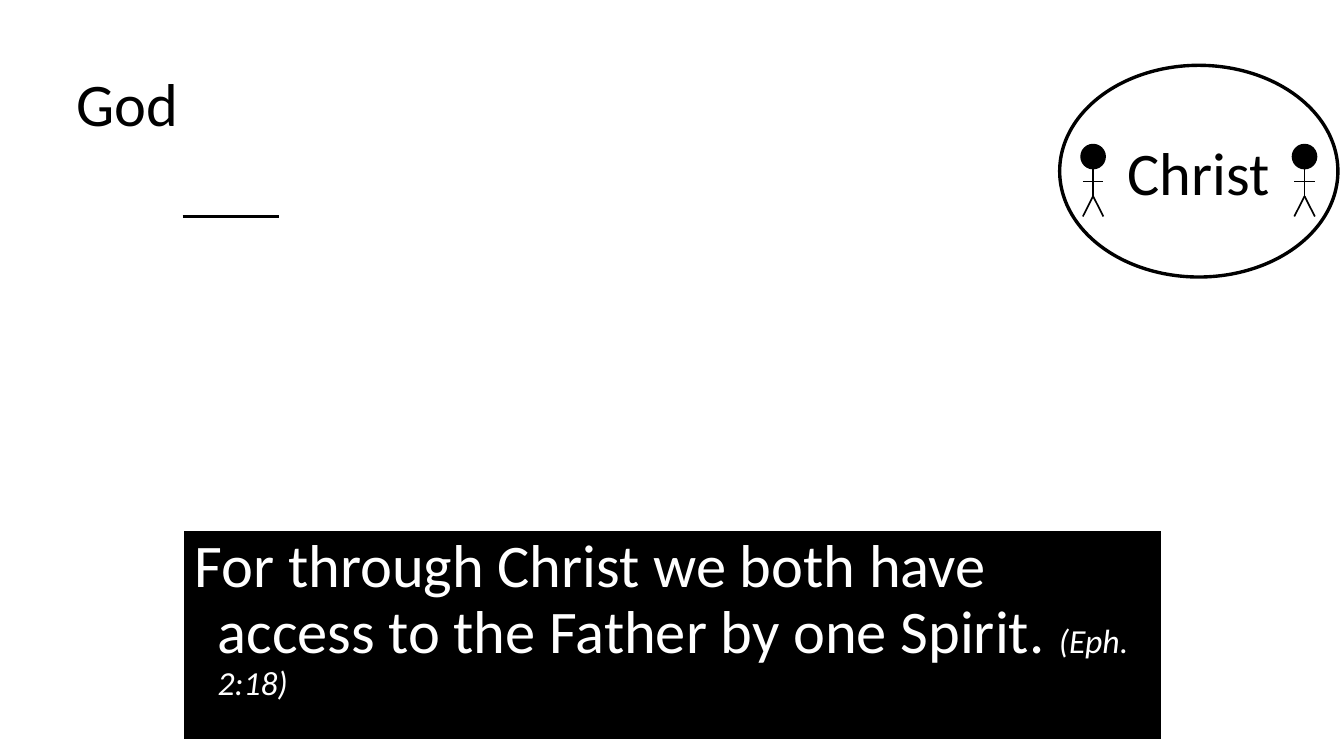
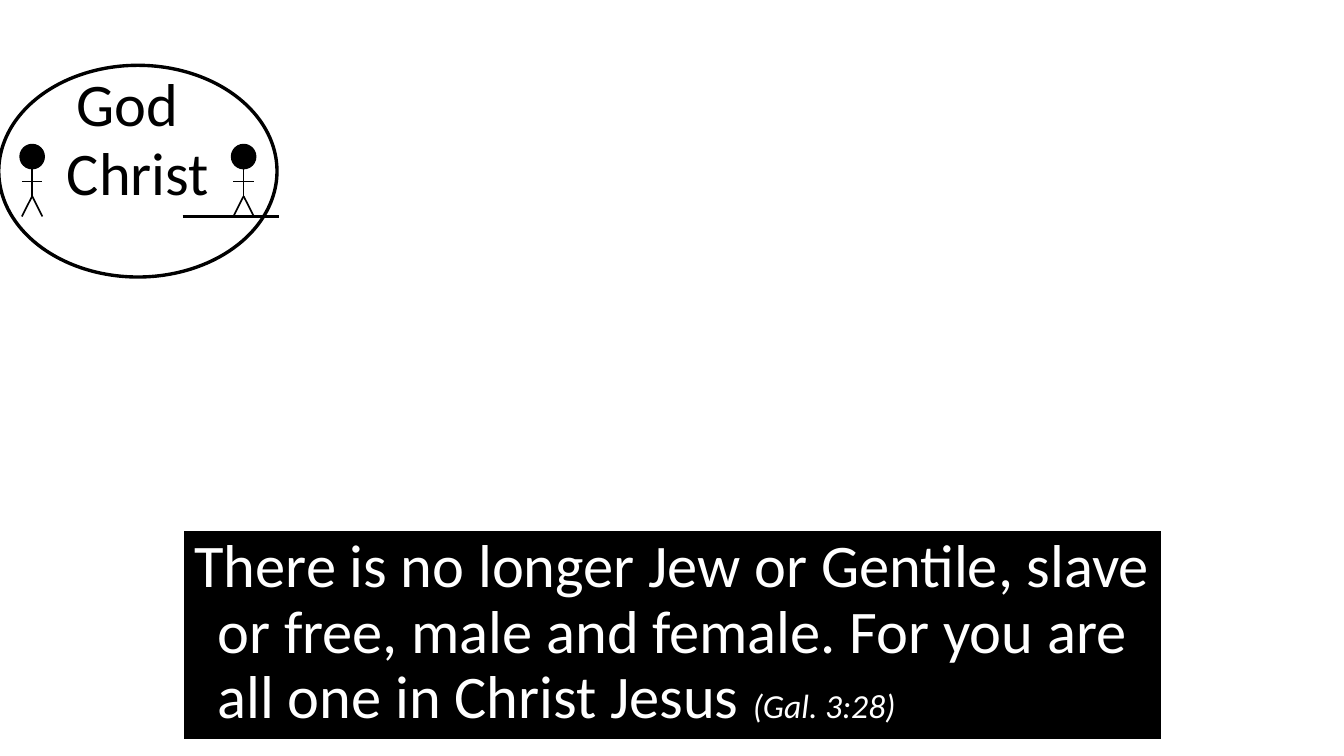
from dataclasses import dataclass

from lxml import etree
from pptx import Presentation
from pptx.dml.color import RGBColor
from pptx.enum.shapes import MSO_CONNECTOR, MSO_SHAPE
from pptx.enum.text import MSO_ANCHOR, PP_ALIGN
from pptx.oxml.ns import qn
from pptx.util import Inches, Pt

STRAIGHT = MSO_CONNECTOR.STRAIGHT
OVAL, ROUNDED = MSO_SHAPE.OVAL, MSO_SHAPE.ROUNDED_RECTANGLE
TOP, MIDDLE = MSO_ANCHOR.TOP, MSO_ANCHOR.MIDDLE
LEFT, CENTER = PP_ALIGN.LEFT, PP_ALIGN.CENTER
BLANK_LAYOUT = 6


@dataclass(frozen=True)
class Theme:
    font: str = "Calibri"
    ink: RGBColor = RGBColor(0, 0, 0)
    paper: RGBColor = RGBColor(255, 255, 255)
    body_size: int = 36
    source_size: int = 20
    thin: int = 1
    medium: int = 2
    thick: int = 3


@dataclass(frozen=True)
class Box:
    left: float
    top: float
    width: float
    height: float

    def point(self, across, down):
        """Slide position of a point given as shares of the box."""
        return self.left + across * self.width, self.top + down * self.height

    def lengths(self):
        return [Inches(v) for v in (self.left, self.top, self.width, self.height)]


THEME = Theme()
SLIDE_WIDTH, SLIDE_HEIGHT = 11.11, 6.25
GOD_BOX = Box(0.43, 0.5, 1.24, 0.71)
VERSE_BOX = Box(1.51, 4.38, 8.1, 1.74)
GROUND_START, GROUND_END = (1.51, 1.79), (2.31, 1.79)
CIRCLE_TOP, CIRCLE_WIDTH, CIRCLE_HEIGHT = 0.54, 2.3, 1.75
PERSON_WIDTH, PERSON_HEIGHT = 0.17, 0.58
PERSON_CENTERS = (0.12, 0.88)  # shares of the circle's width
PERSON_TOP = 0.67  # below the circle's top

# Body, right leg, left leg and arms as shares of the person's box
LIMBS = (
    ((0.5, 0.29), (0.5, 0.71)),
    ((0.5, 0.71), (1, 1)),
    ((0.5, 0.71), (0, 1)),
    ((0, 0.5), (1, 0.5)),
)

SLIDES = (
    (8.76, "For through Christ we both have access to the Father by one Spirit. ",
     "(Eph. 2:18)"),
    (-0.01, "There is no longer Jew or Gentile, slave or free, male and female. "
     "For you are all one in Christ Jesus ", "(Gal. 3:28)"),
)


def add_run(paragraph, text, color, size=THEME.body_size, italic=False):
    run = paragraph.add_run()
    run.text = text
    run.font.name = THEME.font
    run.font.size = Pt(size)
    run.font.color.rgb = color
    run.font.italic = italic


def start_text(shape, align, anchor=TOP):
    """Set up the text frame and return its first paragraph."""
    frame = shape.text_frame
    frame.word_wrap = True
    frame.vertical_anchor = anchor
    paragraph = frame.paragraphs[0]
    paragraph.alignment = align
    return paragraph


def add_figure(shapes, preset, box, fill, line, width):
    figure = shapes.add_shape(preset, *box.lengths())
    figure.shadow.inherit = False
    if fill is None:
        figure.fill.background()
    else:
        figure.fill.solid()
        figure.fill.fore_color.rgb = fill
    figure.line.color.rgb = line
    figure.line.width = Pt(width)
    return figure


def add_stroke(shapes, start, end, width):
    stroke = shapes.add_connector(STRAIGHT, *(Inches(v) for v in (*start, *end)))
    stroke.line.color.rgb = THEME.ink
    stroke.line.width = Pt(width)
    etree.SubElement(stroke._element.spPr, qn("a:effectLst"))


def draw_person(shapes, box):
    head = Box(box.left, box.top, box.width, box.width)
    add_figure(shapes, OVAL, head, THEME.ink, THEME.ink, THEME.thick)
    for start, end in LIMBS:
        add_stroke(shapes, box.point(*start), box.point(*end), THEME.thin)


def draw_christ_circle(slide, box):
    """Group the circle with the two people who stand inside it."""
    members = slide.shapes.add_group_shape().shapes
    for share in PERSON_CENTERS:
        center, _ = box.point(share, 0)
        draw_person(members, Box(center - PERSON_WIDTH / 2, box.top + PERSON_TOP,
                                 PERSON_WIDTH, PERSON_HEIGHT))
    circle = add_figure(members, OVAL, box, None, THEME.ink, THEME.medium)
    add_run(start_text(circle, CENTER, MIDDLE), "Christ", THEME.ink)


def draw_god_label(slide, box):
    label = slide.shapes.add_textbox(*box.lengths())
    add_run(start_text(label, CENTER), "God", THEME.ink)


def draw_verse(slide, box, verse, source):
    panel = add_figure(slide.shapes, ROUNDED, box, THEME.ink, THEME.paper, THEME.medium)
    panel.adjustments[0] = 0
    paragraph = start_text(panel, LEFT)
    paragraph.line_spacing = 0.9
    properties = paragraph._p.get_or_add_pPr()
    properties.set("marL", str(Inches(0.19)))
    properties.set("indent", str(Inches(-0.19)))
    add_run(paragraph, verse, THEME.paper)
    add_run(paragraph, source, THEME.paper, THEME.source_size, italic=True)


def build_slide(deck, circle_left, verse, source):
    slide = deck.slides.add_slide(deck.slide_layouts[BLANK_LAYOUT])
    draw_god_label(slide, GOD_BOX)
    draw_verse(slide, VERSE_BOX, verse, source)
    add_stroke(slide.shapes, GROUND_START, GROUND_END, THEME.medium)
    draw_christ_circle(slide, Box(circle_left, CIRCLE_TOP, CIRCLE_WIDTH, CIRCLE_HEIGHT))


def main():
    deck = Presentation()
    deck.slide_width = Inches(SLIDE_WIDTH)
    deck.slide_height = Inches(SLIDE_HEIGHT)
    for content in SLIDES:
        build_slide(deck, *content)
    deck.save("out.pptx")


if __name__ == "__main__":
    main()
